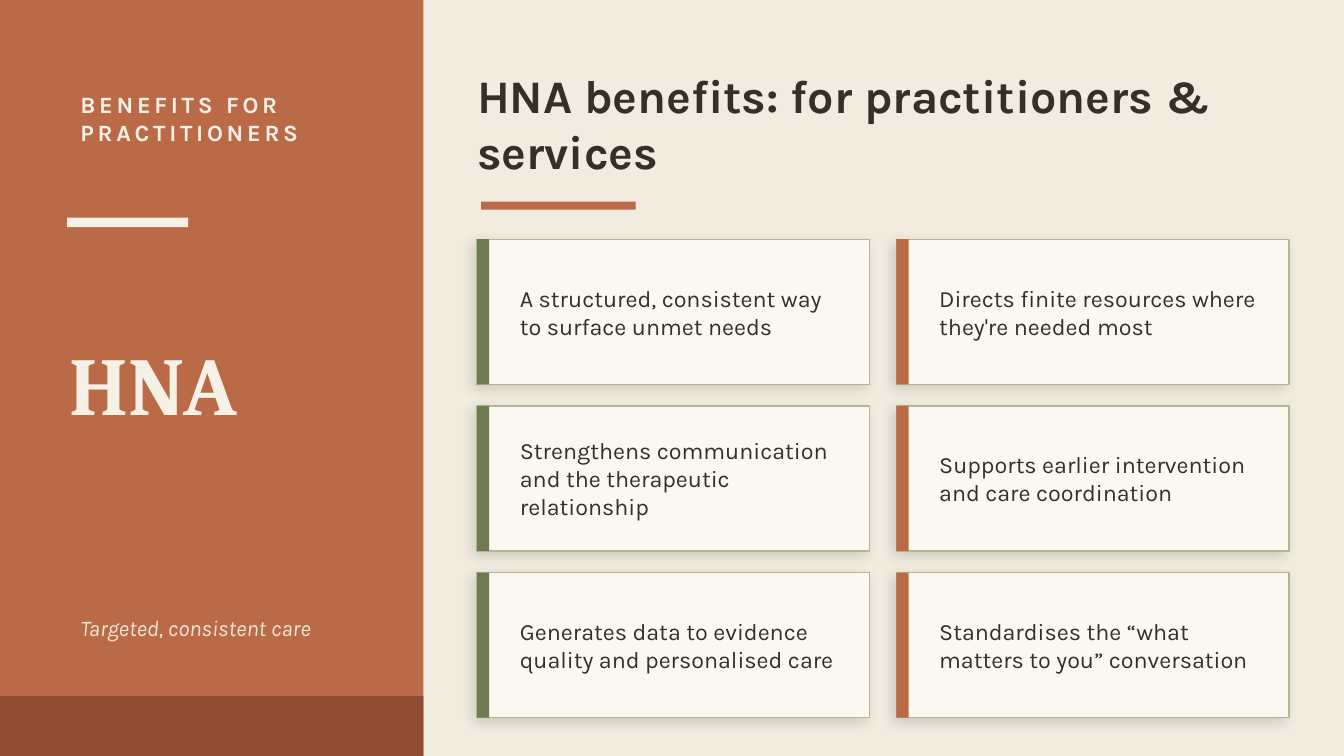
from lxml import etree
from pptx import Presentation
from pptx.dml.color import RGBColor
from pptx.enum.shapes import MSO_SHAPE
from pptx.enum.text import MSO_ANCHOR
from pptx.oxml.ns import qn
from pptx.util import Pt

PX = 4572
RECTANGLE = MSO_SHAPE.RECTANGLE
TOP = MSO_ANCHOR.TOP
MIDDLE = MSO_ANCHOR.MIDDLE

SAND = RGBColor(0xF2, 0xEC, 0xE0)
TERRACOTTA = RGBColor(0xBB, 0x6A, 0x48)
RUST = RGBColor(0x8F, 0x4E, 0x33)
CREAM = RGBColor(0xF6, 0xF1, 0xE7)
LINEN = RGBColor(0xED, 0xE7, 0xD8)
INK = RGBColor(0x35, 0x2F, 0x27)
IVORY = RGBColor(0xFB, 0xF8, 0xF1)
SAGE = RGBColor(0xAE, 0xB9, 0x8F)
OLIVE = RGBColor(0x6E, 0x7A, 0x50)

SLIDE_WIDTH, SLIDE_HEIGHT = 2000, 1125
SIDEBAR_WIDTH = 630
FOOTER_TOP = 1036
GRID_LEFT, GRID_TOP = 710, 356
CARD_WIDTH, CARD_HEIGHT = 584, 216
COLUMN_GAP, ROW_GAP = 40, 32
ACCENT_WIDTH = 18
TEXT_INDENT, TEXT_MARGIN, TEXT_WIDTH = 44, 12, 512

BENEFITS = [
    "A structured, consistent way to surface unmet needs",
    "Directs finite resources where they're needed most",
    "Strengthens communication and the therapeutic relationship",
    "Supports earlier intervention and care coordination",
    "Generates data to evidence quality and personalised care",
    "Standardises the “what matters to you” conversation",
]
COLUMN_ACCENTS = [OLIVE, TERRACOTTA]


def emu(*lengths):
    return [length * PX for length in lengths]


def add_block(slide, left, top, width, height, color):
    block = slide.shapes.add_shape(RECTANGLE, *emu(left, top, width, height))
    block.shadow.inherit = False
    block.fill.solid()
    block.fill.fore_color.rgb = color
    block.line.fill.background()
    return block


def add_soft_shadow(block):
    effects = block._element.spPr.find(qn("a:effectLst"))
    shadow = etree.SubElement(
        effects, qn("a:outerShdw"), blurRad=str(Pt(7)), dist=str(Pt(3)),
        dir=str(135 * 60000), algn="bl", rotWithShape="0")
    color = etree.SubElement(shadow, qn("a:srgbClr"), val="000000")
    etree.SubElement(color, qn("a:alpha"), val="14000")


def add_text(slide, left, top, width, height, wording, size, color,
             face="Karla", bold=False, italic=False, leading=None,
             tracking=None, anchor=TOP, inset=True):
    box = slide.shapes.add_textbox(*emu(left, top, width, height))
    frame = box.text_frame
    frame.word_wrap = True
    frame.vertical_anchor = anchor
    if not inset:
        frame.margin_left = frame.margin_right = 0
        frame.margin_top = frame.margin_bottom = 0
    paragraph = frame.paragraphs[0]
    if leading:
        paragraph.line_spacing = Pt(leading)
    run = paragraph.add_run()
    run.text = wording
    run.font.name = face
    run.font.size = Pt(size)
    run.font.bold = bold
    run.font.italic = italic
    run.font.color.rgb = color
    if tracking:
        run.font._element.set("spc", str(tracking * 100))


def add_sidebar(slide):
    add_block(slide, 0, 0, SIDEBAR_WIDTH, SLIDE_HEIGHT, TERRACOTTA)
    add_block(slide, 0, FOOTER_TOP, SIDEBAR_WIDTH,
              SLIDE_HEIGHT - FOOTER_TOP, RUST)
    add_block(slide, 100, 324, 180, 14, CREAM)
    add_text(slide, 100, 124, 480, 200, "BENEFITS FOR PRACTITIONERS", 12.5,
             CREAM, bold=True, leading=15, tracking=2)
    add_text(slide, 84, 400, 510, 340, "HNA", 44, CREAM, face="Cambria",
             bold=True, anchor=MIDDLE)
    add_text(slide, 100, 900, 470, 180, "Targeted, consistent care", 12,
             LINEN, italic=True, leading=16)


def add_heading(slide):
    add_text(slide, GRID_LEFT, 100, 1200, 200,
             "HNA benefits: for practitioners & services", 25, INK,
             bold=True, inset=False)
    add_block(slide, 716, 300, 230, 12, TERRACOTTA)


def add_card(slide, left, top, benefit, accent):
    card = add_block(slide, left, top, CARD_WIDTH, CARD_HEIGHT, IVORY)
    card.line.color.rgb = SAGE
    card.line.width = Pt(0.75)
    add_soft_shadow(card)
    add_block(slide, left, top, ACCENT_WIDTH, CARD_HEIGHT, accent)
    add_text(slide, left + TEXT_INDENT, top + TEXT_MARGIN, TEXT_WIDTH,
             CARD_HEIGHT - 2 * TEXT_MARGIN, benefit, 12.5, INK,
             leading=15, anchor=MIDDLE)


def main():
    deck = Presentation()
    deck.slide_width, deck.slide_height = emu(SLIDE_WIDTH, SLIDE_HEIGHT)
    slide = deck.slides.add_slide(deck.slide_layouts[6])
    slide.background.fill.solid()
    slide.background.fill.fore_color.rgb = SAND
    add_sidebar(slide)
    add_heading(slide)
    for index, benefit in enumerate(BENEFITS):
        row, column = divmod(index, len(COLUMN_ACCENTS))
        add_card(slide, GRID_LEFT + column * (CARD_WIDTH + COLUMN_GAP),
                 GRID_TOP + row * (CARD_HEIGHT + ROW_GAP),
                 benefit, COLUMN_ACCENTS[column])
    deck.save("out.pptx")


if __name__ == "__main__":
    main()
